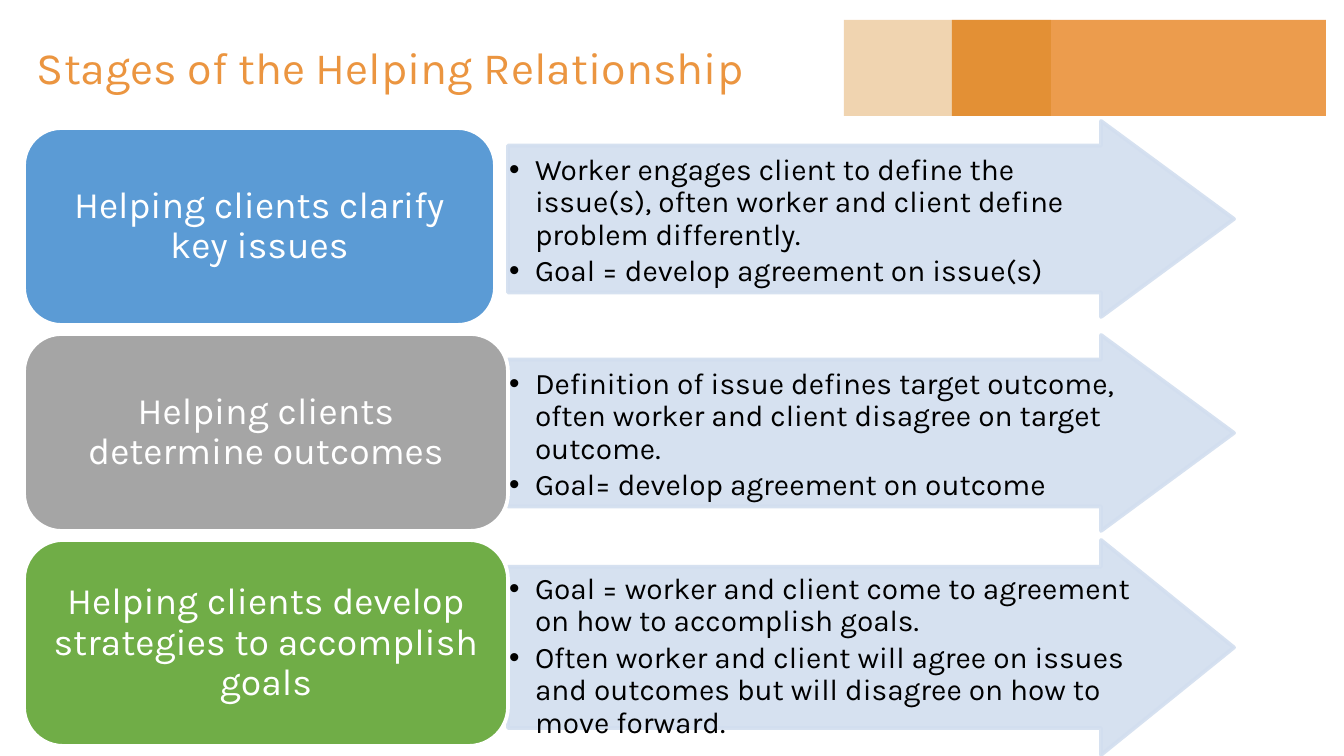
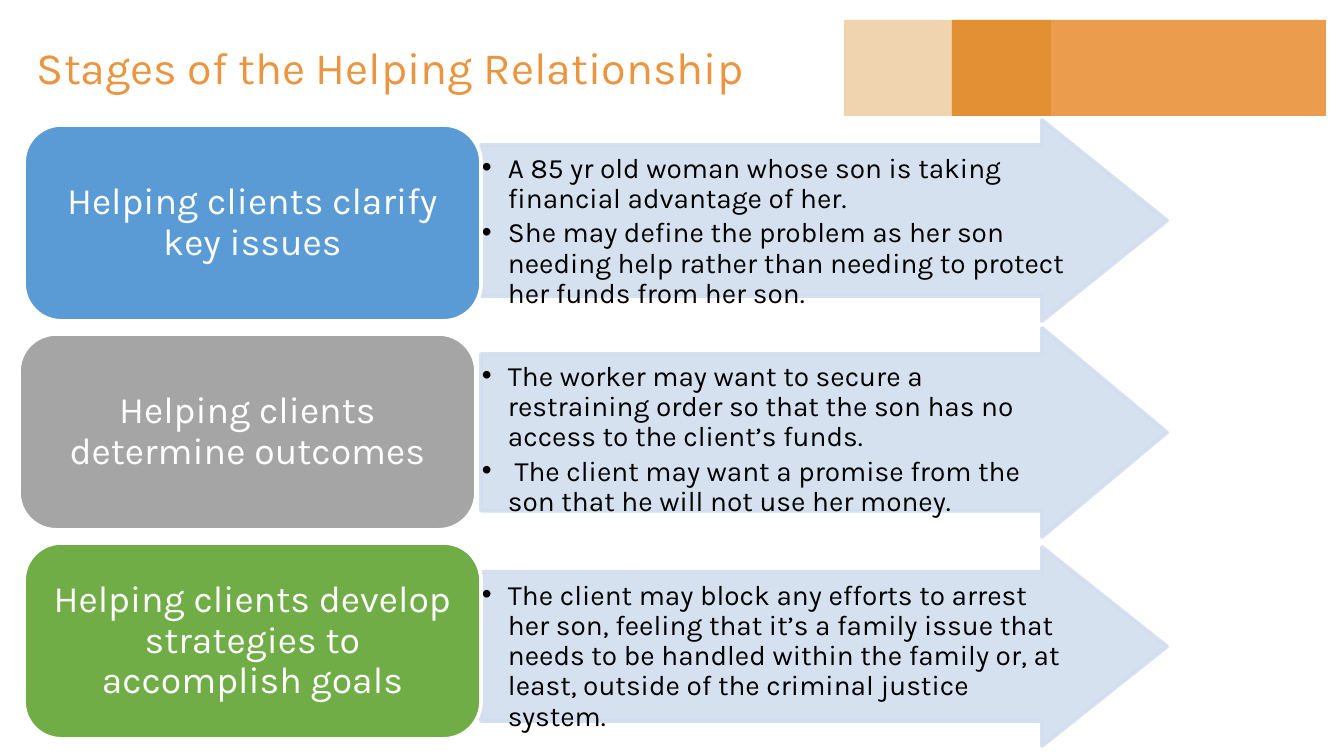
from dataclasses import dataclass

from lxml.etree import SubElement
from pptx import Presentation
from pptx.dml.color import RGBColor
from pptx.enum.shapes import MSO_SHAPE as SHAPE
from pptx.enum.text import MSO_ANCHOR as ANCHOR, PP_ALIGN as ALIGN
from pptx.oxml.ns import qn
from pptx.util import Emu, Pt

TITLE = "Stages of the Helping Relationship"
STAGES = [
    ("Helping clients clarify key issues", "5B9BD5"),
    ("Helping clients determine outcomes", "A5A5A5"),
    ("Helping clients develop strategies to accomplish goals", "70AD47"),
]

# All lengths are px; boxes are (left, top, width, height), arrows (top, height).
SLIDES = [
    {
        "size": 16, "arrow_left": 508, "arrow_width": 726, "head": 133,
        "boxes": [(24, 128, 471, 197), (24, 334, 484, 197), (24, 540, 484, 206)],
        "arrows": [(121, 196), (335, 196), (540, 215)],
        "points": [
            ["Worker engages client to define the issue(s), often worker and "
             "client define problem differently.",
             "Goal = develop agreement on issue(s)"],
            ["Definition of issue defines target outcome, often worker and "
             "client disagree on target outcome.",
             "Goal= develop agreement on outcome"],
            ["Goal = worker and client come to agreement on how to accomplish goals.",
             "Often worker and client will agree on issues and outcomes but "
             "will disagree on how to move forward."],
        ],
    },
    {
        "size": 15, "arrow_left": 481, "arrow_width": 686, "head": 125,
        "boxes": [(24, 125, 457, 196), (19, 334, 457, 196), (24, 543, 457, 196)],
        "arrows": [(120, 201), (328, 209), (547, 199)],
        "points": [
            ["A 85 yr old woman whose son is taking financial advantage of her.",
             "She may define the problem as her son needing help rather than "
             "needing to protect her funds from her son."],
            ["The worker may want to secure a restraining order so that the son "
             "has no access to the client’s funds.",
             " The client may want a promise from the son that he will not use "
             "her money."],
            ["The client may block any efforts to arrest her son, feeling that "
             "it’s a family issue that needs to be handled within the family or, "
             "at least, outside of the criminal justice system."],
        ],
    },
]


@dataclass(frozen=True)
class Theme:
    font: str = "Karla"
    title_size: int = 24
    stage_size: int = 20
    title: str = "EB9540"
    overlay: str = "D07700"
    arrow: str = "D2DEEF"
    text: str = "000000"
    light: str = "FFFFFF"


THEME = Theme()
BANDS = [((952, 20, 374, 96), THEME.title, 93), ((844, 20, 207, 96), THEME.overlay, 31)]
SHAFT = 0.75
CORNER = 0.19
INDENT = 26


def px(n):
    return Emu(round(n * 914400 / 134.4))


def rgb(code):
    return RGBColor.from_string(code)


def add_shape(slide, kind, at, fill, line=None, opacity=100, adjust=()):
    sp = slide.shapes.add_shape(kind, *map(px, at))
    sp.shadow.inherit = False
    for i, value in enumerate(adjust):
        sp.adjustments[i] = value
    sp.fill.solid()
    sp.fill.fore_color.rgb = rgb(fill)
    if line:
        sp.line.color.rgb = rgb(line)
        sp.line.width = Pt(2)
    else:
        sp.line.fill.background()
    if opacity < 100:
        for color in sp.element.spPr.iter(qn("a:srgbClr")):
            SubElement(color, qn("a:alpha"), val=str(opacity * 1000))
    return sp


def set_frame(sp, anchor, left, top, right, bottom):
    tf = sp.text_frame
    tf.word_wrap = True
    tf.vertical_anchor = anchor
    tf.margin_left, tf.margin_top = px(left), px(top)
    tf.margin_right, tf.margin_bottom = px(right), px(bottom)
    return tf


def add_bullet(p):
    pPr = p._p.get_or_add_pPr()
    pPr.set("marL", str(px(INDENT)))
    pPr.set("indent", str(px(-INDENT)))
    SubElement(pPr, qn("a:buFont"), typeface="Arial")
    SubElement(pPr, qn("a:buChar"), char="•")


def write(tf, lines, size, color, align=ALIGN.LEFT, bullets=False):
    for i, line in enumerate(lines):
        p = tf.add_paragraph() if i else tf.paragraphs[0]
        if bullets:
            add_bullet(p)
        p.alignment = align
        p.line_spacing = 0.9
        p.space_after = Pt(size * 0.15)
        r = p.add_run()
        r.text = line
        r.font.name = THEME.font
        r.font.size = Pt(size)
        r.font.color.rgb = rgb(color)


def add_header(slide):
    for at, color, opacity in BANDS:
        add_shape(slide, SHAPE.RECTANGLE, at, color, opacity=opacity)
    sp = slide.shapes.add_textbox(*map(px, (24, 7, 1210, 126)))
    tf = set_frame(sp, ANCHOR.MIDDLE, 13, 13, 13, 13)
    write(tf, [TITLE], THEME.title_size, THEME.title)


def add_arrow(slide, page, top, height, points):
    head = page["head"]
    at = page["arrow_left"], top, page["arrow_width"], height
    sp = add_shape(slide, SHAPE.RIGHT_ARROW, at, THEME.arrow, THEME.arrow, 90,
                   (SHAFT, head / height))
    # The text area of an arrow starts at its shaft and runs into the head.
    inset = 34 - height * (1 - SHAFT) / 2
    right = max(0, 98 - head * SHAFT)
    tf = set_frame(sp, ANCHOR.TOP, 1, inset, right, inset)
    write(tf, points, page["size"], THEME.text, bullets=True)


def add_stage(slide, at, label, color):
    sp = add_shape(slide, SHAPE.ROUNDED_RECTANGLE, at, color, THEME.light,
                   adjust=(CORNER,))
    tf = set_frame(sp, ANCHOR.MIDDLE, 16, 9, 16, 9)
    write(tf, [label], THEME.stage_size, THEME.light, ALIGN.CENTER)


def main():
    prs = Presentation()
    prs.slide_width, prs.slide_height = px(1344), px(756)
    for page in SLIDES:
        slide = prs.slides.add_slide(prs.slide_layouts[6])
        add_header(slide)
        rows = zip(STAGES, page["boxes"], page["arrows"], page["points"])
        for (label, color), box, (top, height), points in rows:
            add_arrow(slide, page, top, height, points)
            add_stage(slide, box, label, color)
    prs.save("out.pptx")


if __name__ == "__main__":
    main()
